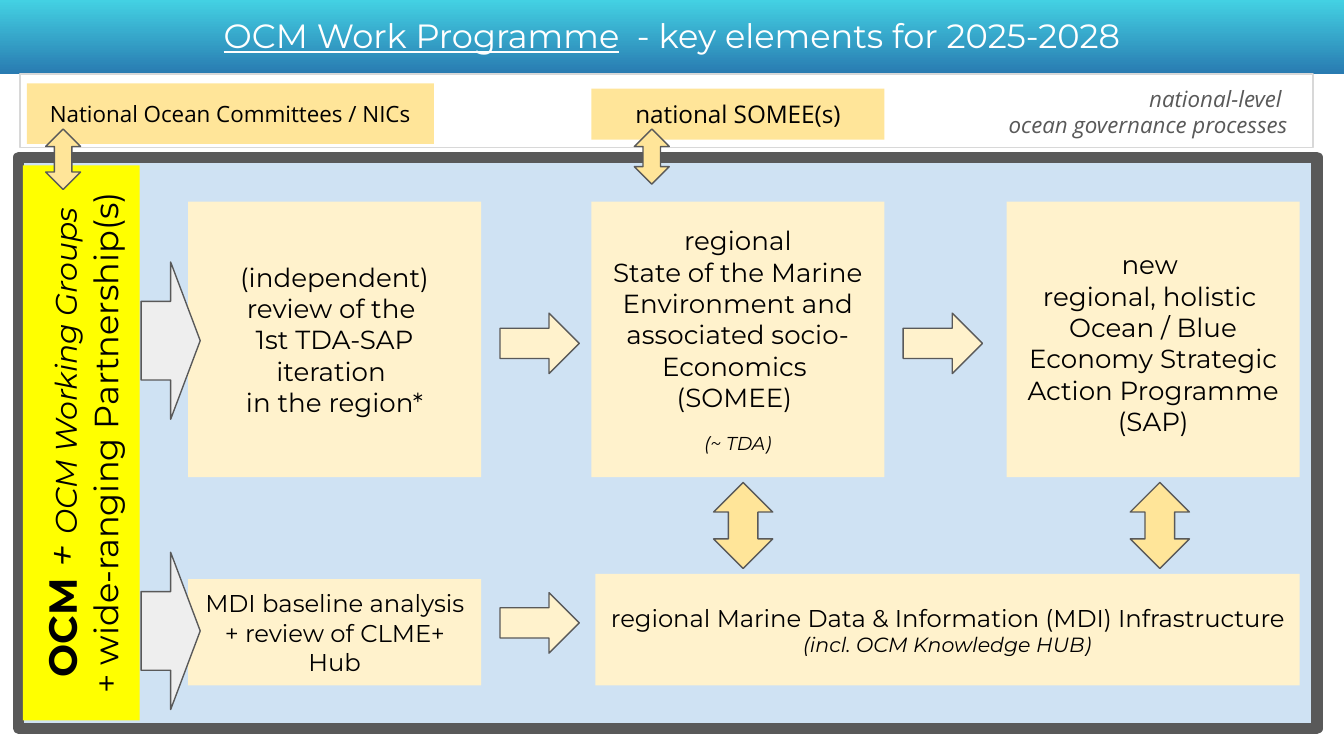
import pptx
import pptx.util
import pptx.dml.color
import pptx.enum.shapes
import pptx.enum.text

Inches, Pt = pptx.util.Inches, pptx.util.Pt
SHAPE = pptx.enum.shapes.MSO_SHAPE
ALIGN = pptx.enum.text.PP_ALIGN
ANCHOR = pptx.enum.text.MSO_ANCHOR

CREAM, GOLD, PALE_GREY, DARK = "FFF2CC", "FFE599", "EEEEEE", "595959"
COLUMNS = (1.4, 4.4, 7.49)
STAGE_TOP, BOX_WIDTH, STAGE_HEIGHT = 1.5, 2.18, 2.05

# Paragraphs are lists of runs; a run is (text, font values that differ).
TITLE = [[("OCM Work Programme", {"underline": True}),
          ("  - key elements for 2025-2028", {})]]
NATIONAL_LABEL = [[("national-level ", {})], [("ocean governance processes", {})]]

# position, outline colour, outline width, fill
PANELS = [
    ((0.15, 0.55, 9.62, 0.55), "D8D8D8", 0.75, None),
    ((0.14, 1.17, 9.66, 4.25), DARK, 6, "CFE2F3"),
]

STAGES = [
    [[("(independent) review of the ", {})], [("1st TDA-SAP iteration ", {})],
     [("in the region*", {})]],
    [[("regional", {})],
     [("State of the Marine Environment and associated socio-Economics ", {})],
     [("(SOMEE) ", {})],
     [("(~ TDA)", {"size": Pt(10), "italic": True})]],
    [[("new ", {})], [("regional, holistic ", {})],
     [("Ocean / Blue Economy Strategic Action Programme (SAP)", {})]],
]

# position, fill, font, size, paragraphs
BOXES = [
    ((1.4, 4.31, BOX_WIDTH, 0.79), CREAM, "Montserrat", 13,
     [[("MDI baseline analysis + review of CLME+ Hub", {})]]),
    ((4.43, 4.27, 5.24, 0.83), CREAM, "Montserrat", 13,
     [[("regional Marine Data & Information (MDI) Infrastructure ", {})],
      [("(incl. OCM Knowledge HUB)", {"size": Pt(11), "italic": True})]]),
    ((4.4, 0.66, BOX_WIDTH, 0.38), GOLD, "Open Sans", 13,
     [[("national SOMEE(s)", {})]]),
    ((0.2, 0.62, 3.03, 0.45), GOLD, "Open Sans", 12,
     [[("National Ocean Committees / NICs", {})]]),
]
PARTNERSHIP = [
    [("OCM ", {"size": Pt(21), "bold": True}),
     ("+ ", {"size": Pt(21), "italic": True}),
     ("OCM Working Groups", {"size": Pt(16), "italic": True})],
    [("+ wide-ranging Partnership(s)", {})],
]

# preset, fill, size, top-left corners
ARROWS = [
    (SHAPE.RIGHT_ARROW, CREAM, (0.59, 0.45), [(3.72, 2.33), (6.72, 2.33), (3.72, 4.41)]),
    (SHAPE.UP_DOWN_ARROW, GOLD, (0.44, 0.64), [(5.31, 3.59), (8.41, 3.59)]),
    (SHAPE.RIGHT_ARROW, PALE_GREY, (0.44, 1.17), [(1.05, 1.95), (1.05, 4.11)]),
    (SHAPE.UP_DOWN_ARROW, GOLD, (0.26, 0.41), [(4.72, 0.96)]),
    (SHAPE.UP_DOWN_ARROW, GOLD, (0.26, 0.45), [(0.34, 0.96)]),
]


def rgb(value):
    return pptx.dml.color.RGBColor.from_string(value)


def set_all(target, values):
    for name, value in values.items():
        setattr(target, name, value)


def add_shape(preset, position, fill=None, line=None, width=0.75):
    shape = slide.shapes.add_shape(preset, *map(Inches, position))
    shape.shadow.inherit = False
    if fill:
        shape.fill.solid()
        shape.fill.fore_color.rgb = rgb(fill)
    else:
        shape.fill.background()
    if line:
        shape.line.color.rgb = rgb(line)
        shape.line.width = Pt(width)
    else:
        shape.line.fill.background()
    return shape


def write(shape, paragraphs, font, size, color="000000", align=ALIGN.CENTER,
          anchor=ANCHOR.MIDDLE, **base):
    frame = shape.text_frame
    margins = {f"margin_{side}": Inches(0.1) for side in ("left", "top", "right", "bottom")}
    set_all(frame, {"word_wrap": True, "auto_size": pptx.enum.text.MSO_AUTO_SIZE.NONE,
                    "vertical_anchor": anchor, **margins})
    for index, runs in enumerate(paragraphs):
        paragraph = frame.add_paragraph() if index else frame.paragraphs[0]
        set_all(paragraph, {"alignment": align, "line_spacing": 1.0,
                            "space_before": Pt(0), "space_after": Pt(0)})
        for text, changes in runs:
            run = paragraph.add_run()
            run.text = text
            set_all(run.font, {"name": font, "size": Pt(size), **base, **changes})
            run.font.color.rgb = rgb(color)
    return frame


deck = pptx.Presentation()
set_all(deck, {"slide_width": Inches(10), "slide_height": Inches(10 * 9 / 16)})
slide = deck.slides.add_slide(deck.slide_layouts[5])

banner = add_shape(SHAPE.RECTANGLE, (-0.01, 0, 10.01, 0.55))
banner.fill.gradient()
banner.fill.gradient_angle = 270
for stop, color in zip(banner.fill.gradient_stops, ("43D1E3", "297BB1")):
    stop.color.rgb = rgb(color)

for position, line, width, fill in PANELS:
    add_shape(SHAPE.RECTANGLE, position, fill, line, width)

stage_frames = []
for left, paragraphs in zip(COLUMNS, STAGES):
    stage = add_shape(SHAPE.RECTANGLE, (left, STAGE_TOP, BOX_WIDTH, STAGE_HEIGHT), CREAM)
    stage_frames.append(write(stage, paragraphs, "Montserrat", 14))
_, somee, action_programme = stage_frames
somee.paragraphs[-1].space_before = Pt(10)
action_programme.margin_top = Inches(0.15)

for position, fill, font, size, paragraphs in BOXES:
    write(add_shape(SHAPE.RECTANGLE, position, fill), paragraphs, font, size)

partnership = add_shape(SHAPE.RECTANGLE, (-1.46, 2.86, 4.13, 0.87), "FFFF00")
partnership.rotation = 270
write(partnership, PARTNERSHIP, "Montserrat", 18)

for preset, fill, size, corners in ARROWS:
    for corner in corners:
        add_shape(preset, corner + size, fill, DARK)

national_label = slide.shapes.add_textbox(*map(Inches, (6.82, 0.53, 2.86, 0.28)))
write(national_label, NATIONAL_LABEL, "Open Sans", 12, DARK, ALIGN.RIGHT,
      ANCHOR.TOP, italic=True)

title = slide.shapes.title
set_all(title, {"left": Inches(0.34), "top": Inches(0.01),
                "width": Inches(9.32), "height": Inches(0.63)})
write(title, TITLE, "Montserrat", 18, "FFFFFF", anchor=ANCHOR.TOP)
slide.shapes._spTree.append(title._element)  # in front of the banner

deck.save("out.pptx")
